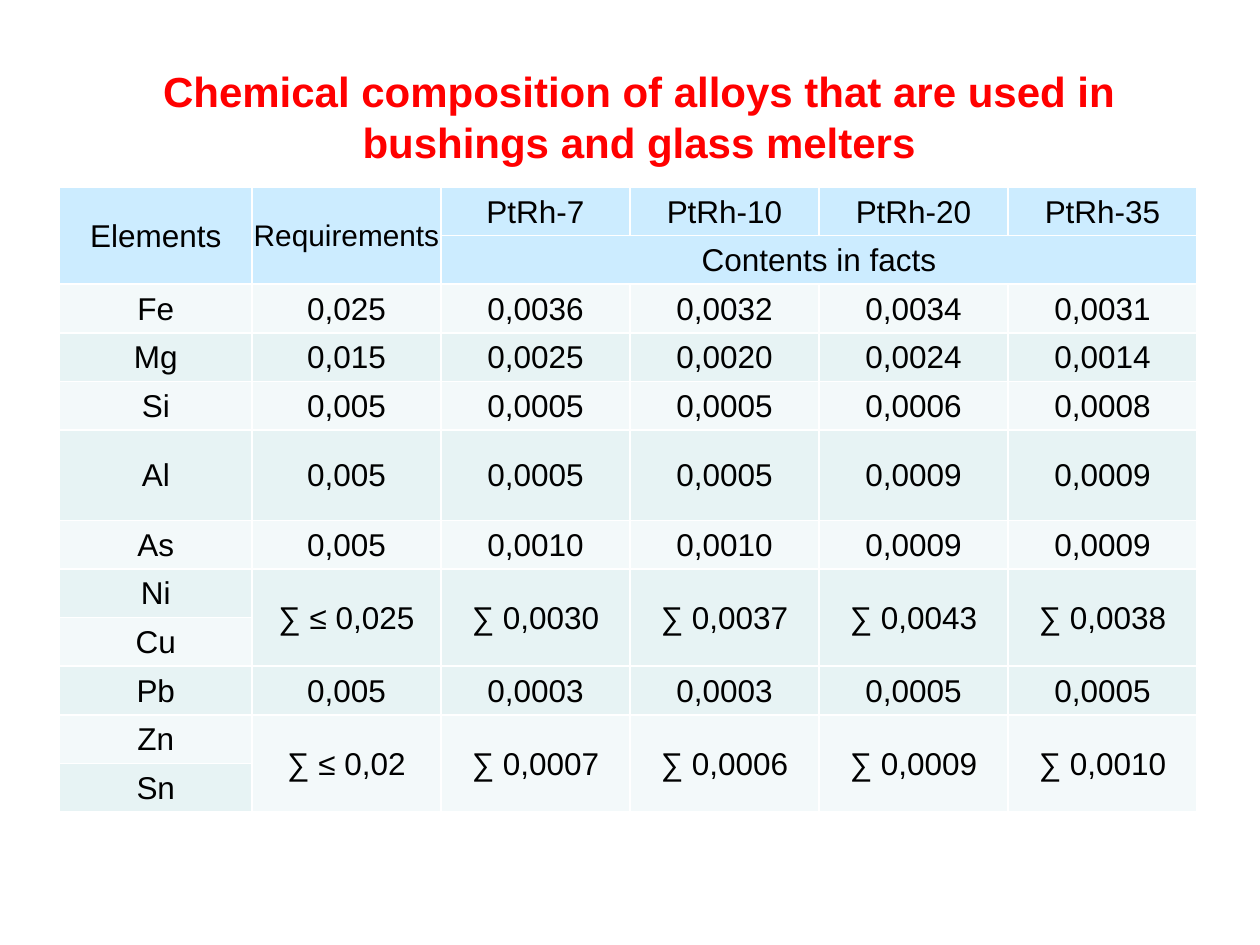
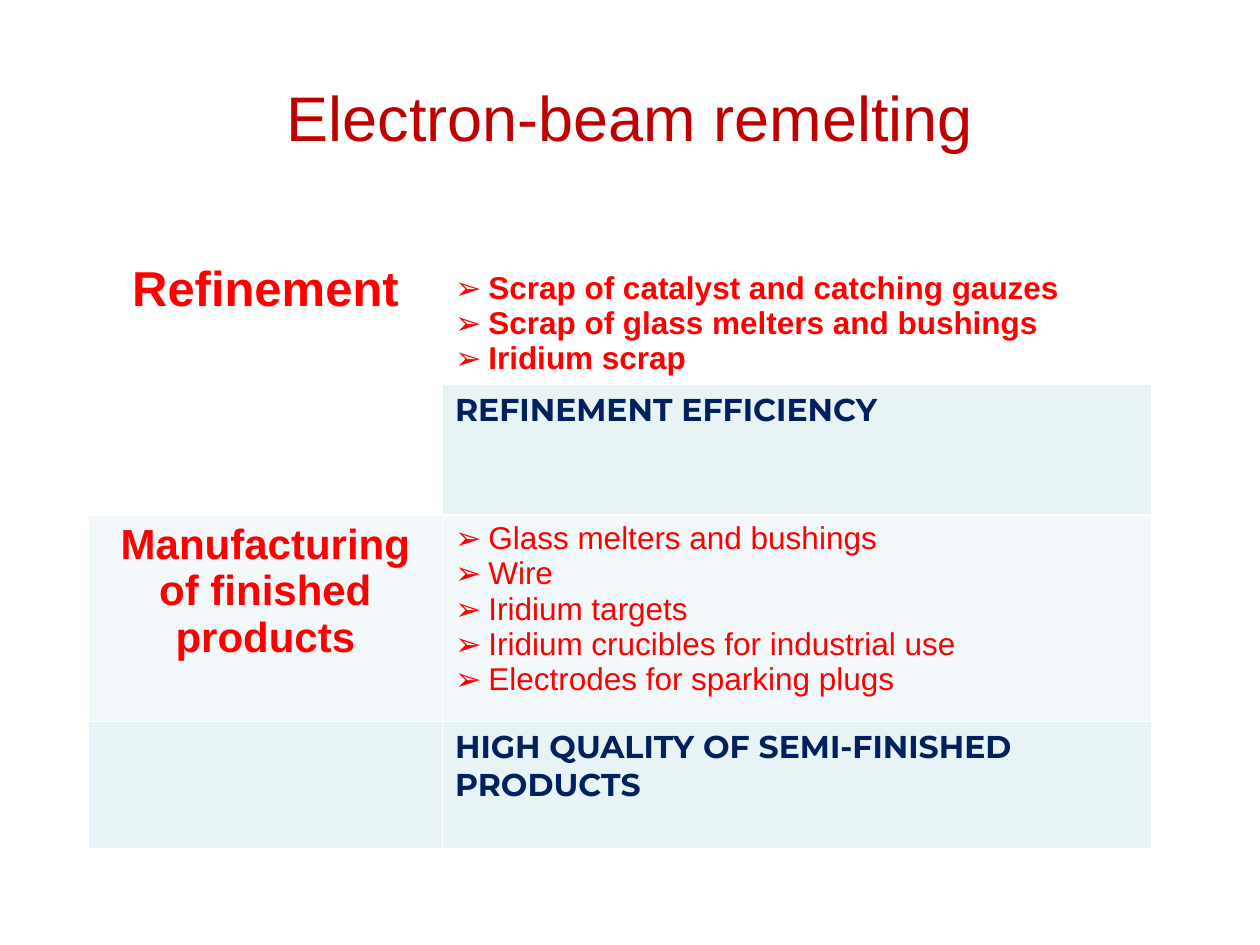
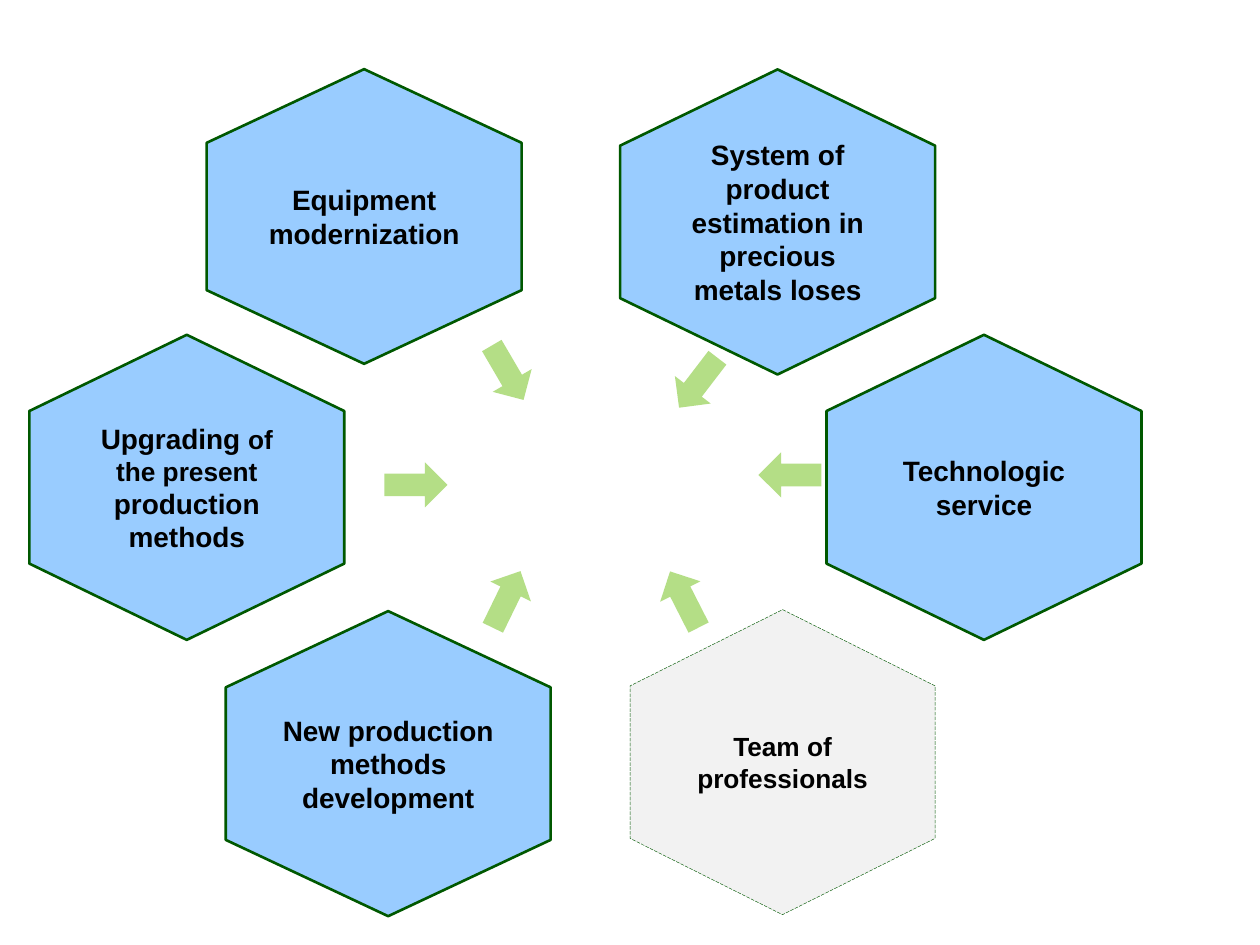
"""Build three slides on alloy composition, electron-beam remelting and development areas."""
from pptx import Presentation
from pptx.dml.color import RGBColor
from pptx.enum.dml import MSO_LINE
from pptx.enum.shapes import MSO_SHAPE
from pptx.enum.text import MSO_ANCHOR, MSO_AUTO_SIZE, PP_ALIGN
from pptx.oxml.ns import qn
from pptx.util import Cm, Pt
from lxml.etree import SubElement

BLACK = RGBColor(0x00, 0x00, 0x00)
RED = RGBColor(0xFF, 0x00, 0x00)
DARK_RED = RGBColor(0xC0, 0x00, 0x00)
NAVY = RGBColor(0x00, 0x20, 0x60)
HEADER_BLUE = RGBColor(0xCC, 0xEC, 0xFF)
PALE_BAND = RGBColor(0xF3, 0xF9, 0xFA)
TEAL_BAND = RGBColor(0xE7, 0xF3, 0xF4)
SKY = RGBColor(0x99, 0xCC, 0xFF)
GREY = RGBColor(0xF2, 0xF2, 0xF2)
DARK_GREEN = RGBColor(0x00, 0x58, 0x00)
LIGHT_GREEN = RGBColor(0xB4, 0xDE, 0x86)
BULLET_INDENT = Cm(0.67)


def write(frame, *paragraphs, size=18, color=BLACK, bold=False, font="Arial",
          align=PP_ALIGN.CENTER, bullet=None):
    """Fill a text frame; a paragraph is a string or a list of (text, size) runs."""
    for number, content in enumerate(paragraphs):
        paragraph = frame.add_paragraph() if number else frame.paragraphs[0]
        paragraph.alignment = align
        if bullet:
            properties = paragraph._p.get_or_add_pPr()
            properties.set("marL", str(BULLET_INDENT))
            properties.set("indent", str(-BULLET_INDENT))
            SubElement(properties, qn("a:buFont"), typeface="Arial")
            SubElement(properties, qn("a:buChar"), char=bullet)
        runs = [(content, size)] if isinstance(content, str) else content
        for text, run_size in runs:
            run = paragraph.add_run()
            run.text = text
            run.font.size = Pt(run_size)
            run.font.name = font
            run.font.bold = bold
            run.font.color.rgb = color


def add_title(slide, text, left, top, width, height, anchor, **text_format):
    """Place and fill the title placeholder."""
    title = slide.shapes.title
    title.left, title.top, title.width, title.height = map(Cm, (left, top, width, height))
    title.text_frame.auto_size = MSO_AUTO_SIZE.NONE
    title.text_frame.vertical_anchor = anchor
    write(title.text_frame, text, **text_format)


presentation = Presentation()
presentation.slide_width, presentation.slide_height = Cm(25.4), Cm(19.05)
title_only, blank = presentation.slide_layouts[5], presentation.slide_layouts[6]

alloys_slide = presentation.slides.add_slide(title_only)
add_title(alloys_slide, "Chemical composition of alloys that are used in bushings and glass melters",
          1.57, 1.2, 22.63, 2.3, MSO_ANCHOR.TOP, size=24, color=RED, bold=True)

composition = [
    ["Elements", "Requirements", "PtRh-7", "PtRh-10", "PtRh-20", "PtRh-35"],
    [None, None, "Contents in facts", None, None, None],
    ["Fe", "0,025", "0,0036", "0,0032", "0,0034", "0,0031"],
    ["Мg", "0,015", "0,0025", "0,0020", "0,0024", "0,0014"],
    ["Si", "0,005", "0,0005", "0,0005", "0,0006", "0,0008"],
    ["Аl", "0,005", "0,0005", "0,0005", "0,0009", "0,0009"],
    ["As", "0,005", "0,0010", "0,0010", "0,0009", "0,0009"],
    ["Ni", "∑ ≤ 0,025", "∑ 0,0030", "∑ 0,0037", "∑ 0,0043", "∑ 0,0038"],
    ["Cu", None, None, None, None, None],
    ["Pb", "0,005", "0,0003", "0,0003", "0,0005", "0,0005"],
    ["Zn", "∑ ≤ 0,02", "∑ 0,0007", "∑ 0,0006", "∑ 0,0009", "∑ 0,0010"],
    ["Sn", None, None, None, None, None],
]
alloys = alloys_slide.shapes.add_table(12, 6, Cm(1.2), Cm(3.77), Cm(22.93), Cm(12.64)).table
for column_index, column in enumerate(alloys.columns):
    column.width = Cm(3.81 if column_index else 3.88)
for row_index, values in enumerate(composition):
    alloys.rows[row_index].height = Cm(1.82 if values[0] == "Аl" else 0.98)
    band = HEADER_BLUE if row_index < 2 else (TEAL_BAND if row_index % 2 else PALE_BAND)
    for column_index, value in enumerate(values):
        cell = alloys.cell(row_index, column_index)
        cell.fill.solid()
        cell.fill.fore_color.rgb = band
        cell.vertical_anchor = MSO_ANCHOR.MIDDLE
        cell.margin_left = cell.margin_right = cell.margin_top = Cm(0.03)
        cell.margin_bottom = 0
        if value:
            write(cell.text_frame, value, size=17 if value == "Requirements" else 18)
alloys.cell(1, 2).merge(alloys.cell(1, 5))
alloys.cell(0, 0).merge(alloys.cell(1, 0))
alloys.cell(0, 1).merge(alloys.cell(1, 1))
for pair_top in (7, 10):
    for column_index in range(1, 6):
        alloys.cell(pair_top, column_index).merge(alloys.cell(pair_top + 1, column_index))

remelting_slide = presentation.slides.add_slide(title_only)
add_title(remelting_slide, "Electron-beam remelting", 1.27, 0.76, 22.86, 3.18,
          MSO_ANCHOR.MIDDLE, size=36, color=DARK_RED)

remelting = remelting_slide.shapes.add_table(4, 2, Cm(1.78), Cm(3.89), Cm(21.44), Cm(13.17)).table
for column, width in zip(remelting.columns, (7.14, 14.3)):
    column.width = Cm(width)
for row, height in zip(remelting.rows, (3.86, 2.57, 4.17, 2.57)):
    row.height = Cm(height)
for row_index, band in enumerate((None, TEAL_BAND, PALE_BAND, TEAL_BAND)):
    for column_index in range(2):
        cell = remelting.cell(row_index, column_index)
        if band is None or (row_index, column_index) == (1, 0):
            cell.fill.background()
        else:
            cell.fill.solid()
            cell.fill.fore_color.rgb = band
remelting.cell(0, 0).merge(remelting.cell(1, 0))
remelting.cell(0, 0).margin_top = Cm(1.4)
remelting.cell(0, 1).margin_top = Cm(1.57)

write(remelting.cell(0, 0).text_frame, "Refinement", size=28, color=RED, bold=True)
write(remelting.cell(2, 0).text_frame, "Manufacturing of finished products",
      size=24, color=RED, bold=True)
write(remelting.cell(0, 1).text_frame, "Scrap of catalyst and catching gauzes",
      "Scrap of glass melters and bushings", "Iridium scrap",
      color=RED, bold=True, align=PP_ALIGN.LEFT, bullet="➢")
write(remelting.cell(2, 1).text_frame, "Glass melters and bushings", "Wire", "Iridium targets",
      "Iridium crucibles for industrial use", "Electrodes for sparking plugs",
      color=RED, align=PP_ALIGN.LEFT, bullet="➢")
for row_index, benefit in ((1, "REFINEMENT EFFICIENCY"), (3, "HIGH QUALITY OF SEMI-FINISHED PRODUCTS")):
    write(remelting.cell(row_index, 1).text_frame, benefit, color=NAVY, bold=True,
          font="Montserrat", align=PP_ALIGN.LEFT)

areas_slide = presentation.slides.add_slide(blank)
inward_arrows = [
    (13.44, 7.26, 127.5), (15.29, 9.12, 180), (13.16, 11.63, 243),
    (7.75, 9.32, 0), (9.58, 11.63, 296), (9.6, 7.06, 59.7),
]
for left, top, angle in inward_arrows:
    arrow = areas_slide.shapes.add_shape(MSO_SHAPE.RIGHT_ARROW, Cm(left), Cm(top), Cm(1.27), Cm(0.91))
    arrow.rotation = angle
    arrow.shadow.inherit = False
    arrow.fill.solid()
    arrow.fill.fore_color.rgb = LIGHT_GREEN
    arrow.line.fill.background()

upgrading = [("Upgrading ", 16), ("of the present ", 15), ("production methods", 16)]
team = "Team of professionals"
areas = [
    (team, 12.7, 12.29, 6.15, 6.15),
    ("Equipment modernization", 4.37, 1.19, 5.94, 6.35),
    (upgrading, 0.69, 6.65, 6.15, 6.35),
    ("New production methods development", 4.75, 12.12, 6.15, 6.55),
    ("System of product estimation in precious metals loses", 12.6, 1.3, 6.15, 6.35),
    ("Technologic service", 16.76, 6.65, 6.15, 6.35),
]
for area, left, top, width, height in areas:
    hexagon = areas_slide.shapes.add_shape(MSO_SHAPE.HEXAGON, Cm(left), Cm(top), Cm(width), Cm(height))
    hexagon.rotation = 90
    hexagon.shadow.inherit = False
    hexagon.fill.solid()
    hexagon.fill.fore_color.rgb = GREY if area == team else SKY
    hexagon.line.color.rgb = DARK_GREEN
    hexagon.line.width = Pt(0.25 if area == team else 1.5)
    if area == team:
        hexagon.line.dash_style = MSO_LINE.LONG_DASH
    frame = hexagon.text_frame
    frame.word_wrap = True
    frame.vertical_anchor = MSO_ANCHOR.MIDDLE
    frame.margin_left = frame.margin_right = frame.margin_top = frame.margin_bottom = 0
    hexagon.element.txBody.bodyPr.set("vert", "vert270")
    write(frame, area, size=15 if area == team else 16, bold=True)

presentation.save("out.pptx")
